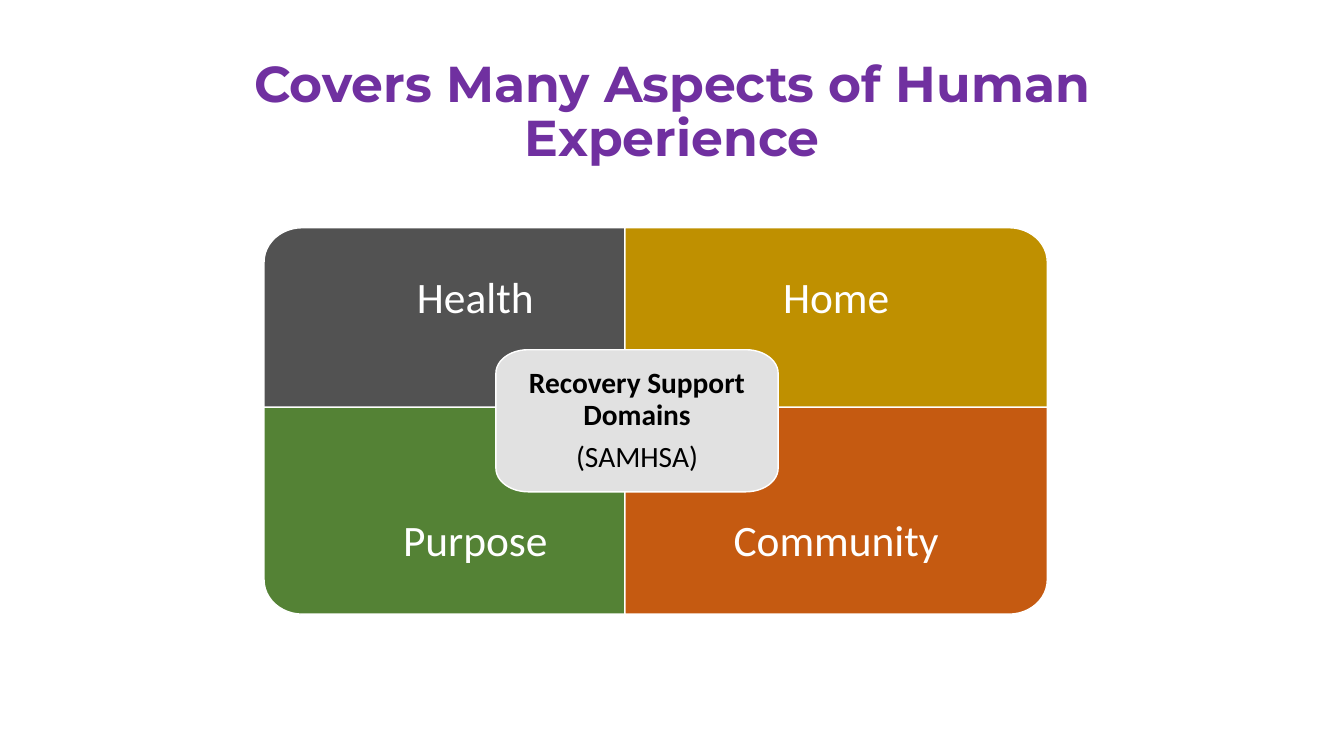
import math

import pptx
import pptx.util
import pptx.dml.color
import pptx.enum.text


def color(code):
    return pptx.dml.color.RGBColor.from_string(code)


class Deck:
    """Style and current slide; lengths are cells of a 160 x 90 grid."""
    head, body = "Montserrat", "Calibri"
    cols = 160
    steps = 12

    def __init__(self):
        self.prs = pptx.Presentation()
        self.prs.slide_width = pptx.util.Inches(13.33)
        self.prs.slide_height = pptx.util.Inches(7.5)
        self.slide = self.prs.slides.add_slide(self.prs.slide_layouts[6])
        self.cell = self.prs.slide_width / self.cols

    def size(self, *cells):
        return [round(c * self.cell) for c in cells]

    def label(self, shape, lines, font, size, ink, pad):
        """Fill a shape with centred lines, each a (text, bold) pair."""
        frame = shape.text_frame
        frame.word_wrap = True
        frame.vertical_anchor = pptx.enum.text.MSO_ANCHOR.MIDDLE
        (frame.margin_left, frame.margin_top,
         frame.margin_right, frame.margin_bottom) = self.size(*pad)
        frame.text = "\n".join(text for text, bold in lines)
        for para, (text, bold) in zip(frame.paragraphs, lines):
            para.alignment = pptx.enum.text.PP_ALIGN.CENTER
            para.line_spacing = 0.9
            para.space_after = pptx.util.Pt(round(0.35 * size, 1))
            style = para.runs[0].font
            style.name, style.bold = font, bold
            style.size = pptx.util.Pt(size)
            style.color.rgb = color(ink)

    def title(self, text, box):
        shape = self.slide.shapes.add_textbox(*self.size(*box))
        self.label(shape, [(text, True)], self.head, 36, "7030A0",
                   (1.2, 0.6, 1.2, 0.6))

    def panel(self, box, bend, round_at, fill, lines, size, ink, pad):
        """Draw a box with elliptical bends at the corners in round_at.

        Corners run clockwise: 0 top left, 1 top right,
        2 bottom right, 3 bottom left.
        """
        left, top, wide, high = box
        points = []
        for nook in range(4):
            east, south = nook in (1, 2), nook in (2, 3)
            x, y = left + wide * east, top + high * south
            if nook not in round_at:
                points.append((x, y))
                continue
            mid_x = x + bend[0] * (-1 if east else 1)
            mid_y = y + bend[1] * (-1 if south else 1)
            for step in range(self.steps + 1):
                turn = math.pi / 2 * (nook + 2 + step / self.steps)
                points.append((mid_x + bend[0] * math.cos(turn),
                               mid_y + bend[1] * math.sin(turn)))
        points = [self.size(*point) for point in points]
        outline = self.slide.shapes.build_freeform(*points[0])
        outline.add_line_segments(points[1:], close=True)
        shape = outline.convert_to_shape()
        shape.shadow.inherit = False
        shape.fill.solid()
        shape.fill.fore_color.rgb = color(fill)
        shape.line.color.rgb = color("FFFFFF")
        shape.line.width = pptx.util.Pt(1)
        self.label(shape, lines, self.body, size, ink, pad)


def main():
    deck = Deck()
    deck.title("Covers Many Aspects of Human Experience",
               (11, 4.8, 138, 17.4))

    # Four domains: text, fill, column, row, rounded corner
    lefts, tops = (31.44, 74.4), (27.12, 48.48)
    pads = (2.88, 2.88, 2.88, 10.56), (2.88, 10.56, 2.88, 2.88)
    domains = [
        ("Health", "525252", 0, 0, 0),
        ("Home", "BF9000", 1, 0, 1),
        ("Purpose", "548235", 0, 1, 3),
        ("Community", "C55A11", 1, 1, 2),
    ]
    for text, fill, col, row, nook in domains:
        deck.panel((lefts[col], tops[row], 50.28, 24.66), (4.56, 4.08),
                   (nook,), fill, [(text, False)], 31, "FFFFFF", pads[row])

    # Centre label
    deck.panel((59.04, 41.64, 33.6, 16.92), (3.84, 2.82), range(4), "E1E1E1",
               [("Recovery Support Domains", True), ("(SAMHSA)", False)],
               21, "000000", (2.64,) * 4)

    deck.prs.save("out.pptx")


if __name__ == "__main__":
    main()
